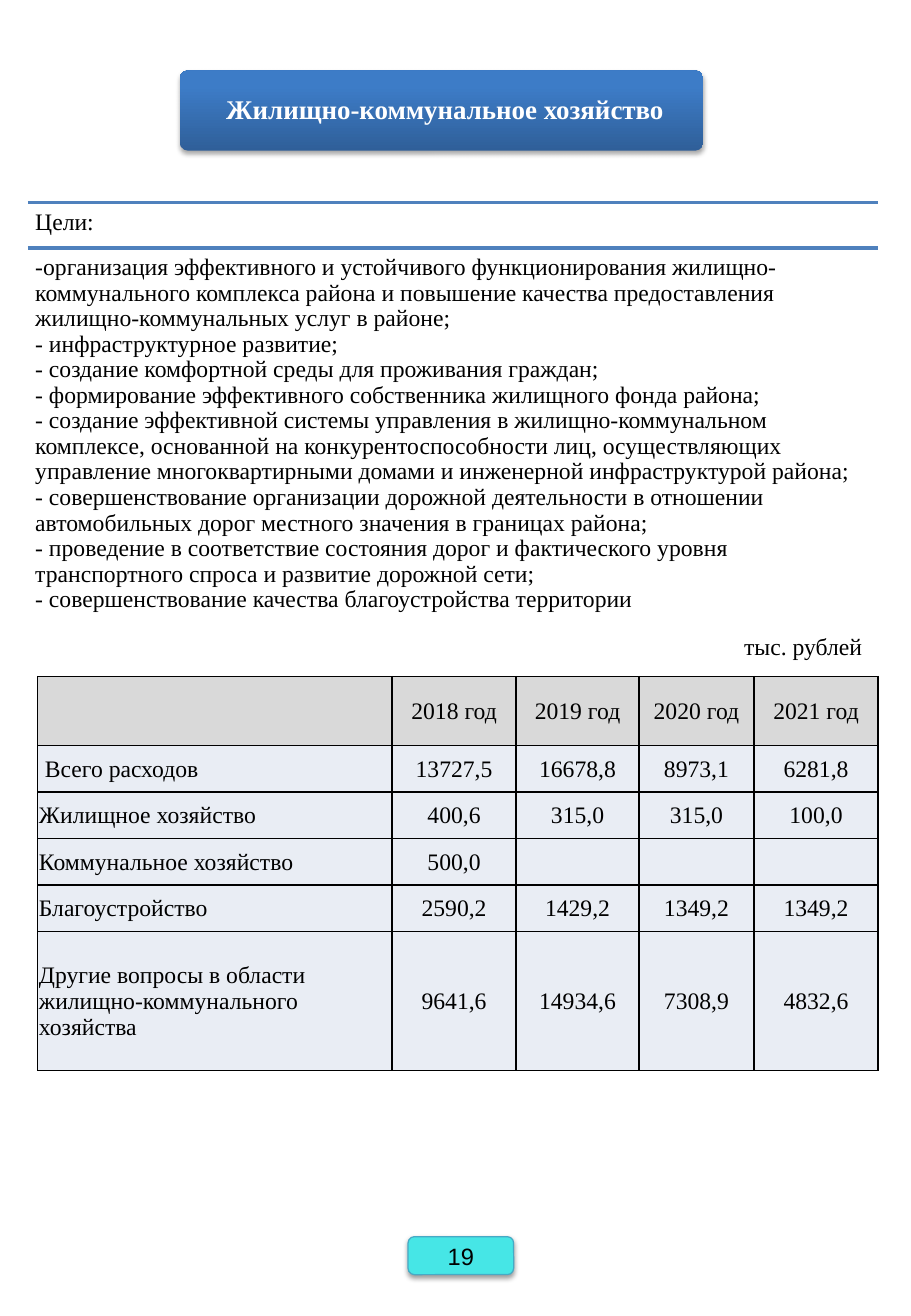
import pptx
import pptx.dml.color
import pptx.enum.shapes
import pptx.enum.text
import pptx.oxml
import pptx.oxml.ns
import pptx.util

Pt = pptx.util.Pt
SHAPE = pptx.enum.shapes.MSO_SHAPE
ALIGN = pptx.enum.text.PP_ALIGN
ANCHOR = pptx.enum.text.MSO_ANCHOR
NAMESPACE = pptx.oxml.ns.nsdecls("a")

GOALS = [
    "-организация эффективного и устойчивого функционирования жилищно-коммунального комплекса "
    "района и повышение качества предоставления жилищно-коммунальных услуг в районе;",
    "- инфраструктурное развитие;",
    "- создание комфортной среды для проживания граждан;",
    "- формирование эффективного собственника жилищного фонда района;",
    "- создание эффективной системы управления в жилищно-коммунальном комплексе, основанной на "
    "конкурентоспособности лиц, осуществляющих управление многоквартирными домами и инженерной "
    "инфраструктурой района;",
    "- совершенствование организации дорожной деятельности в отношении автомобильных дорог "
    "местного значения в границах района;",
    "- проведение в соответствие состояния дорог и фактического уровня транспортного спроса и "
    "развитие дорожной сети;",
    "- совершенствование качества благоустройства территории",
]
EXPENSES = [
    ["", "2018 год", "2019 год", "2020 год", "2021 год"],
    [" Всего расходов", "13727,5", "16678,8", "8973,1", "6281,8"],
    ["Жилищное хозяйство", "400,6", "315,0", "315,0", "100,0"],
    ["Коммунальное хозяйство", "500,0", "", "", ""],
    ["Благоустройство", "2590,2", "1429,2", "1349,2", "1349,2"],
    ["Другие вопросы в области жилищно-коммунального хозяйства",
     "9641,6", "14934,6", "7308,9", "4832,6"],
]
COLUMN_WIDTHS = [210, 73.6, 72.8, 68.2, 73.6]
ROW_HEIGHTS = [41, 27.5, 27.5, 27.5, 27.5, 82.5]


def color(value):
    return pptx.dml.color.RGBColor.from_string(value)


class SlideBuilder:
    font = "Times New Roman"
    size = 14
    ink = "000000"
    rule_color = "4F81BD"

    def __init__(self, slide):
        self.slide = slide

    def add_lines(self, frame, lines, align=ALIGN.LEFT, spacing=None, **style):
        """Fill a text frame with one paragraph for each line."""
        for index, line in enumerate(lines):
            paragraph = frame.paragraphs[0] if index == 0 else frame.add_paragraph()
            paragraph.alignment = align
            paragraph.line_spacing = spacing
            run = paragraph.add_run()
            run.text = line
            run.font.name = style.get("font", self.font)
            run.font.size = Pt(style.get("size", self.size))
            run.font.bold = style.get("bold", False)
            run.font.color.rgb = color(style.get("ink", self.ink))

    def text(self, box, lines, inset=4.3, **style):
        frame = self.slide.shapes.add_textbox(*map(Pt, box)).text_frame
        frame.word_wrap = True
        frame.margin_left = frame.margin_right = Pt(inset)
        frame.margin_top = frame.margin_bottom = Pt(inset)
        self.add_lines(frame, lines, **style)

    def rule(self, left, top, width):
        line = self.slide.shapes.add_connector(
            pptx.enum.shapes.MSO_CONNECTOR.STRAIGHT, Pt(left), Pt(top), Pt(left + width), Pt(top))
        line.line.color.rgb = color(self.rule_color)
        line.line.width = Pt(2)
        line._element.spPr.append(pptx.oxml.parse_xml(f"<a:effectLst {NAMESPACE}/>"))

    def badge(self, kind, box, label, opacity, **style):
        """Add a labelled shape with a soft shadow below it."""
        shape = self.slide.shapes.add_shape(kind, *map(Pt, box))
        shape.line.fill.background()
        shape._element.spPr.append(pptx.oxml.parse_xml(
            f'<a:effectLst {NAMESPACE}><a:outerShdw blurRad="{Pt(3.1)}" dist="{Pt(1.8)}" '
            f'dir="5400000" rotWithShape="0"><a:srgbClr val="000000">'
            f'<a:alpha val="{opacity * 1000}"/></a:srgbClr></a:outerShdw></a:effectLst>'))
        shape.text_frame.word_wrap = True
        shape.text_frame.vertical_anchor = ANCHOR.MIDDLE
        self.add_lines(shape.text_frame, [label], align=ALIGN.CENTER, **style)
        return shape

    def cell(self, cell, text, align, fill):
        cell.vertical_anchor = ANCHOR.MIDDLE
        cell.margin_left = cell.margin_right = cell.margin_top = Pt(0.7)
        cell.margin_bottom = Pt(0)
        properties = cell._tc.get_or_add_tcPr()
        for side in "LRTB":
            properties.append(pptx.oxml.parse_xml(
                f'<a:ln{side} {NAMESPACE} w="{Pt(1)}"><a:solidFill>'
                f'<a:srgbClr val="{self.ink}"/></a:solidFill></a:ln{side}>'))
        cell.fill.solid()
        cell.fill.fore_color.rgb = color(fill)
        if text:
            self.add_lines(cell.text_frame, [text], align=align)

    def table(self, left, top, rows, widths, heights):
        table = self.slide.shapes.add_table(
            len(rows), len(widths), Pt(left), Pt(top), Pt(sum(widths)), Pt(sum(heights))).table
        table.first_row = table.horz_banding = False
        for column, width in zip(table.columns, widths):
            column.width = Pt(width)
        for row_index, (row, height) in enumerate(zip(rows, heights)):
            table.rows[row_index].height = Pt(height)
            for column_index, text in enumerate(row):
                self.cell(table.cell(row_index, column_index), text,
                          ALIGN.CENTER if column_index else ALIGN.LEFT,
                          "E9EDF4" if row_index else "D9D9D9")


def main():
    presentation = pptx.Presentation()
    presentation.slide_width = Pt(540)
    presentation.slide_height = Pt(780)
    builder = SlideBuilder(presentation.slides.add_slide(presentation.slide_layouts[6]))

    title = builder.badge(SHAPE.ROUNDED_RECTANGLE, (106.6, 41.8, 310.3, 47.5),
                          " Жилищно-коммунальное хозяйство", 35,
                          size=16, bold=True, ink="FFFFFF", spacing=0.9)
    title.adjustments[0] = 0.1
    title.fill.gradient()
    title.fill.gradient_angle = 90
    for stop, (position, shade) in zip(title.fill.gradient_stops,
                                       [(0, "2F5F99"), (0.8, "3D7CC7")]):
        stop.position = position
        stop.color.rgb = color(shade)

    for top, height, lines in [(120.2, 26.8, ["Цели:"]), (147, 219, GOALS)]:
        builder.rule(16.6, top, 504)
        builder.text((16.6, top, 504, height), lines, spacing=0.9)

    builder.text((416, 367.2, 102.2, 24.5), ["тыс. рублей"], inset=7.2, align=ALIGN.RIGHT)
    builder.table(22.4, 401, EXPENSES, COLUMN_WIDTHS, ROW_HEIGHTS)

    page = builder.badge(SHAPE.FLOWCHART_ALTERNATE_PROCESS, (241.9, 733, 62.6, 22.5),
                         "19", 38, font="Arial")
    page.fill.solid()
    page.fill.fore_color.rgb = color("46E6E6")
    page.line.color.rgb = color("46AAC5")
    page.line.width = Pt(0.75)

    presentation.save("out.pptx")


if __name__ == "__main__":
    main()
